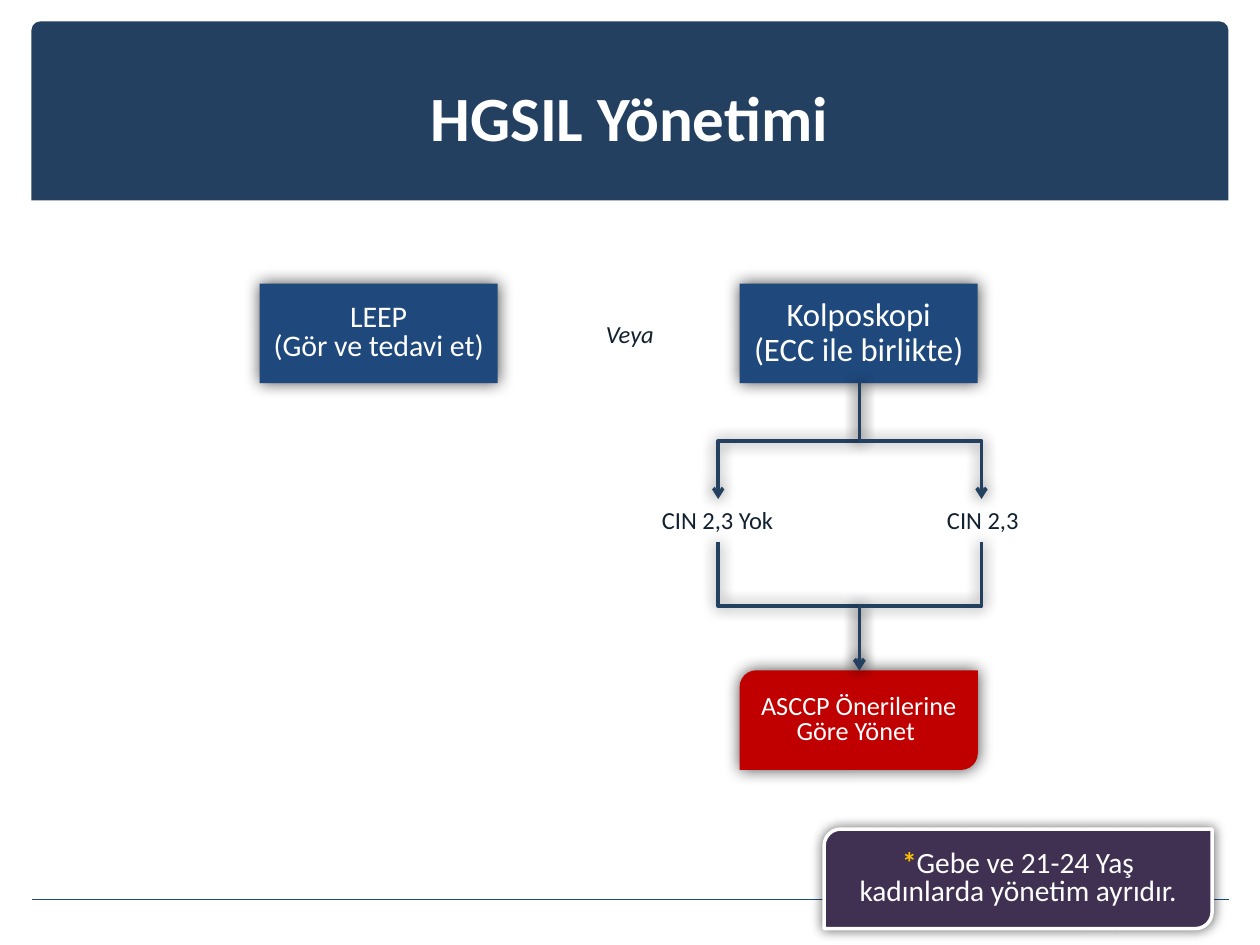
"""Build the HGSIL management flowchart slide."""
from dataclasses import dataclass

from lxml import etree
from pptx import Presentation
from pptx.dml.color import RGBColor
from pptx.enum.shapes import MSO_CONNECTOR, MSO_SHAPE
from pptx.enum.text import MSO_ANCHOR, MSO_AUTO_SIZE, PP_ALIGN
from pptx.oxml.ns import qn
from pptx.util import Inches, Pt

RECTANGLE = MSO_SHAPE.RECTANGLE
DIAGONAL = MSO_SHAPE.ROUND_2_DIAG_RECTANGLE
HEADER = MSO_SHAPE.ROUND_2_SAME_RECTANGLE
ELBOW, STRAIGHT = MSO_CONNECTOR.ELBOW, MSO_CONNECTOR.STRAIGHT
MIDDLE, TOP = MSO_ANCHOR.MIDDLE, MSO_ANCHOR.TOP
CENTER = PP_ALIGN.CENTER
FIT_SHAPE, FIT_NONE = MSO_AUTO_SIZE.SHAPE_TO_FIT_TEXT, MSO_AUTO_SIZE.NONE
WIDTH, HEIGHT = Inches(10), Inches(7.5)
COLUMNS, ROWS = 100, 75


@dataclass(frozen=True)
class Theme:
    font: str = "Calibri"
    navy: str = "244061"
    blue: str = "1F497D"
    red: str = "C00000"
    purple: str = "403152"
    gold: str = "FFC000"
    ink: str = "122030"
    white: str = "FFFFFF"
    shadow: str = "000000"
    title: float = 36
    procedure: float = 18.7
    treatment: float = 17.1
    note: float = 16.8
    advice: float = 15
    label: float = 14


@dataclass(frozen=True)
class Area:
    column: float
    row: float
    columns: float
    rows: float

    def lengths(self) -> tuple:
        return (across(self.column), down(self.row),
                across(self.columns), down(self.rows))


@dataclass(frozen=True)
class Span:
    text: str
    color: str
    size: float
    bold: bool = False
    italic: bool = False


@dataclass(frozen=True)
class Card:
    area: Area
    kind: int
    fill: str
    paras: tuple
    spacing: float = 0.8
    inset: float = 0.05
    outline: str = ""
    glow: tuple = (70, 9.4)


@dataclass(frozen=True)
class Label:
    area: Area
    span: Span


@dataclass(frozen=True)
class Branch:
    start: tuple
    end: tuple


THEME = Theme()
CARD_COLUMN, CARD_COLUMNS, CARD_ROWS = 58.7, 18.9, 7.9
TOP_ROW, ADVICE_ROW = 22.5, 53.2
LABEL_ROW, LABEL_ROWS = 39.6, 3.4
TRUNK = 68.2
BRANCH_COLUMNS = (57, 77.9)


def across(columns: float) -> int:
    return round(WIDTH * columns / COLUMNS)


def down(rows: float) -> int:
    return round(HEIGHT * rows / ROWS)


def assign(target, values: dict) -> None:
    for name, value in values.items():
        setattr(target, name, value)


def paint(fill, color: str) -> None:
    fill.solid()
    fill.fore_color.rgb = RGBColor.from_string(color)


def write(frame, paras: tuple, spacing: float = 1) -> None:
    for index, spans in enumerate(paras):
        para = frame.add_paragraph() if index else frame.paragraphs[0]
        assign(para, {"alignment": CENTER, "line_spacing": spacing})
        for span in spans:
            run = para.add_run()
            run.text = span.text
            assign(run.font, {"name": THEME.font, "size": Pt(span.size),
                              "bold": span.bold, "italic": span.italic})
            run.font.color.rgb = RGBColor.from_string(span.color)


def add_glow(properties, opacity: float, blur: float) -> None:
    effects = etree.SubElement(properties, qn("a:effectLst"))
    shadow = etree.SubElement(effects, qn("a:outerShdw"), blurRad=str(Pt(blur)),
                              algn="ctr", rotWithShape="0")
    color = etree.SubElement(shadow, qn("a:srgbClr"), val=THEME.shadow)
    etree.SubElement(color, qn("a:alpha"), val=str(opacity * 1000))


def draw_card(page, card: Card) -> None:
    box = page.shapes.add_shape(card.kind, *card.area.lengths())
    paint(box.fill, card.fill)
    if card.outline:
        paint(box.line.fill, card.outline)
        box.line.width = Pt(2)
    else:
        box.line.fill.background()
    add_glow(box.element.spPr, *card.glow)
    assign(box.text_frame, {"word_wrap": True, "vertical_anchor": MIDDLE,
                            "margin_left": Inches(card.inset),
                            "margin_right": Inches(card.inset)})
    write(box.text_frame, card.paras, card.spacing)


def draw_label(page, label: Label) -> None:
    box = page.shapes.add_textbox(*label.area.lengths())
    assign(box.text_frame, {"word_wrap": False, "auto_size": FIT_SHAPE,
                            "vertical_anchor": TOP})
    write(box.text_frame, ((label.span,),))


def draw_branch(page, branch: Branch) -> None:
    left, top = across(branch.start[0]), down(branch.start[1])
    right, bottom = across(branch.end[0]), down(branch.end[1])
    rightward = right > left
    half_run, half_rise = (bottom - top) // 2, abs(right - left) // 2
    middle_x, middle_y = (left + right) // 2, (top + bottom) // 2
    ends = (middle_x - half_run, middle_x + half_run)
    begin_x, end_x = reversed(ends) if rightward else ends
    link = page.shapes.add_connector(ELBOW, begin_x, middle_y - half_rise,
                                     end_x, middle_y + half_rise)
    link.rotation = 270 if rightward else 90
    paint(link.line.fill, THEME.navy)
    link.line.width = Pt(2)
    etree.SubElement(link.line._get_or_add_ln(), qn("a:tailEnd"), type="arrow")
    add_glow(link.element.spPr, 65, 8.7)


def draw_frame(page) -> None:
    title = page.shapes.title
    assign(title, dict(zip(("left", "top", "width", "height"),
                           Area(3.3, 3, 93.3, 12.5).lengths())))
    assign(title.text_frame, {"word_wrap": True, "vertical_anchor": MIDDLE,
                              "auto_size": FIT_NONE})
    write(title.text_frame,
          ((Span("HGSIL Yönetimi", THEME.white, THEME.title, bold=True),),))
    band = page.shapes.add_shape(HEADER, *Area(2.5, 1.7, 95, 14.2).lengths())
    band.adjustments[0], band.adjustments[1] = 0.049, 0
    band.shadow.inherit = False
    paint(band.fill, THEME.navy)
    band.line.fill.background()
    rule = page.shapes.add_connector(STRAIGHT, across(2.5), down(71.4),
                                     across(97.5), down(71.4))
    paint(rule.line.fill, THEME.blue)
    rule.line.width = Pt(1)
    etree.SubElement(rule.element.spPr, qn("a:effectLst"))
    for part in (band, rule):
        title.element.addprevious(part.element)


def card_area(column: float, row: float) -> Area:
    return Area(column, row, CARD_COLUMNS, CARD_ROWS)


def lines(size: float, *texts: str) -> tuple:
    return tuple((Span(text, THEME.white, size),) for text in texts)


CARDS = (
    Card(card_area(CARD_COLUMN, TOP_ROW), RECTANGLE, THEME.blue,
         lines(THEME.procedure, "Kolposkopi", "(ECC ile birlikte)"), spacing=0.9),
    Card(card_area(20.6, TOP_ROW), RECTANGLE, THEME.blue,
         lines(THEME.treatment, "LEEP", "(Gör ve tedavi et)")),
    Card(card_area(CARD_COLUMN, ADVICE_ROW), DIAGONAL, THEME.red,
         lines(THEME.advice, "ASCCP Önerilerine Göre Yönet ")),
    Card(Area(65.4, 65.8, 30.8, CARD_ROWS), DIAGONAL, THEME.purple,
         ((Span("*", THEME.gold, THEME.note, bold=True),
           Span("Gebe ve 21-24 Yaş kadınlarda yönetim ayrıdır.",
                THEME.white, THEME.note)),),
         inset=0.15, outline=THEME.white, glow=(60, 7.1)),
)
LABELS = (
    Label(Area(51.4, LABEL_ROW, 11.1, LABEL_ROWS),
          Span("CIN 2,3 Yok", THEME.ink, THEME.label)),
    Label(Area(74.1, LABEL_ROW, 7.8, LABEL_ROWS),
          Span("CIN 2,3", THEME.ink, THEME.label)),
    Label(Area(46.8, 24.8, 6.4, LABEL_ROWS),
          Span("Veya", THEME.ink, THEME.label, italic=True)),
)
BRANCHES = tuple(
    Branch((TRUNK, TOP_ROW + CARD_ROWS), (column, LABEL_ROW))
    for column in BRANCH_COLUMNS
) + tuple(
    Branch((column, LABEL_ROW + LABEL_ROWS), (TRUNK, ADVICE_ROW))
    for column in BRANCH_COLUMNS
)


def main() -> None:
    deck = Presentation()
    assign(deck, {"slide_width": WIDTH, "slide_height": HEIGHT})
    page = deck.slides.add_slide(deck.slide_layouts[5])
    draw_frame(page)
    for draw, items in ((draw_card, CARDS), (draw_label, LABELS),
                        (draw_branch, BRANCHES)):
        for item in items:
            draw(page, item)
    deck.save("out.pptx")


if __name__ == "__main__":
    main()
